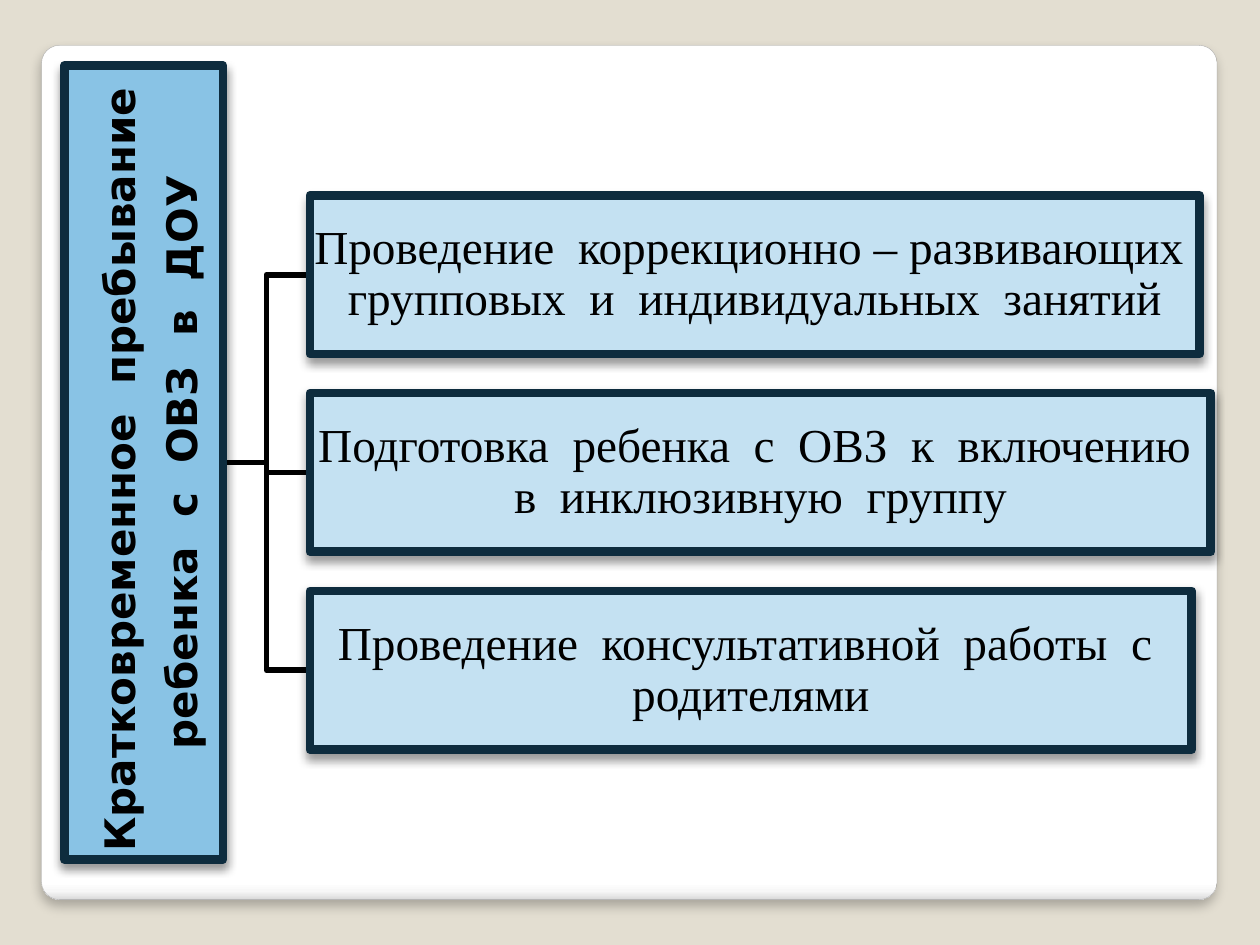
from lxml.etree import SubElement
from pptx import Presentation
from pptx.dml.color import RGBColor
from pptx.enum.shapes import MSO_SHAPE as Shape
from pptx.enum.text import MSO_ANCHOR as Anchor, MSO_AUTO_SIZE as AutoSize, PP_ALIGN as Align
from pptx.oxml.ns import qn
from pptx.util import Inches, Pt

COLUMNS, ROWS = 100, 75
BOX_HEIGHT = 12.6
BOX_LEFT, FIRST_CENTER, BOX_STEP = 24.6, 21.8, 15.7
TITLE_LENGTH, TITLE_X, TITLE_Y = 63, 11.4, 36.7

TITLE = "Кратковременное  пребывание  ребенка  с  ОВЗ  в  ДОУ"
BRANCHES = [
    ("Проведение  коррекционно – развивающих  групповых  и  индивидуальных  занятий", 70.6),
    ("Подготовка  ребенка  с  ОВЗ  к  включению  в  инклюзивную  группу", 71.5),
    ("Проведение  консультативной  работы  с  родителями", 70),
]


def color(value):
    return RGBColor.from_string(value)


def add_color(parent, value):
    return SubElement(parent, qn("a:srgbClr"), val=value)


class Diagram:
    """Holds the style and the page; lengths are grid columns and rows."""

    ink, border = "000000", "0E2C3E"
    title_fill, branch_fill = "89C3E5", "C4E1F2"
    panel_stops = [(0, "FFFFFF"), (98, "FFFFFF"), (99, "F7F7F7"), (100, "DADADA")]

    def __init__(self, deck):
        self.column = deck.slide_width / COLUMNS
        self.row = deck.slide_height / ROWS
        self.page = deck.slides.add_slide(deck.slide_layouts[5])
        background = self.page.background.fill
        background.solid()
        background.fore_color.rgb = color("E3DED1")

    def place(self, left, top, width, height):
        return (round(left * self.column), round(top * self.row),
                round(width * self.column), round(height * self.row))

    def outline(self, shape, value, width):
        shape.line.color.rgb = color(value)
        shape.line.width = Pt(width)
        SubElement(shape.line._get_or_add_ln(), qn("a:round"))

    def drop_shadow(self, shape, alpha, blur, distance):
        shape.shadow.inherit = False
        effects = shape.element.spPr.find(qn("a:effectLst"))
        shadow = SubElement(effects, qn("a:outerShdw"), blurRad=str(Pt(blur)),
                            dist=str(Pt(distance)), dir="5400000", rotWithShape="0")
        SubElement(add_color(shadow, self.ink), qn("a:alpha"), val=str(alpha * 1000))

    def panel(self, left, top, width, height):
        box = self.page.shapes.add_shape(
            Shape.ROUNDED_RECTANGLE, *self.place(left, top, width, height))
        box.adjustments[0] = 0.021
        box.fill.gradient()
        box.fill.gradient_angle = 270
        stops = box.element.spPr.find(qn("a:gradFill")).find(qn("a:gsLst"))
        stops.clear()
        for position, value in self.panel_stops:
            add_color(SubElement(stops, qn("a:gs"), pos=str(position * 1000)), value)
        self.outline(box, "A4A4A4", 0.16)
        self.drop_shadow(box, 25, 6, 4)

    def elbow(self, start, end):
        (x1, y1), (x2, y2) = start, end
        middle = (x1 + x2) / 2
        builder = self.page.shapes.build_freeform(
            round(x1 * self.column), round(y1 * self.row))
        builder.add_line_segments(
            [(round(x * self.column), round(y * self.row))
             for x, y in ((middle, y1), (middle, y2), (x2, y2))], close=False)
        line = builder.convert_to_shape()
        line.fill.background()
        line.shadow.inherit = False
        self.outline(line, self.ink, 3.35)

    def style_box(self, box, text, fill, font, size, spacing, bold=False):
        box.fill.solid()
        box.fill.fore_color.rgb = color(fill)
        self.outline(box, self.border, 5)
        self.drop_shadow(box, 40, 5.2, 3)
        frame = box.text_frame
        frame.text = text
        frame.word_wrap = True
        frame.auto_size = AutoSize.NONE
        frame.vertical_anchor = Anchor.MIDDLE
        frame.margin_left = frame.margin_right = Inches(0.02)
        frame.margin_top = frame.margin_bottom = Inches(0.02)
        para = frame.paragraphs[0]
        para.alignment = Align.CENTER
        para.line_spacing = spacing
        span = para.runs[0]
        span.font.name, span.font.size, span.font.bold = font, Pt(size), bold
        span.font.color.rgb = color(self.ink)

    def title(self, text):
        """Turn the title placeholder into the upright root box, above the panel."""
        box = self.page.shapes.title
        box.left, box.top, box.width, box.height = self.place(
            TITLE_X - TITLE_LENGTH / 2, TITLE_Y - BOX_HEIGHT / 2, TITLE_LENGTH, BOX_HEIGHT)
        box.rotation = 270
        self.style_box(box, text, self.title_fill, "DejaVu Sans", 24, 1.23, bold=True)
        box.element.getparent().append(box.element)

    def branch(self, text, center, width):
        box = self.page.shapes.add_shape(Shape.RECTANGLE, *self.place(
            BOX_LEFT, center - BOX_HEIGHT / 2, width, BOX_HEIGHT))
        self.style_box(box, text, self.branch_fill, "Times New Roman", 27, 0.9)


def main():
    deck = Presentation()
    deck.slide_width, deck.slide_height = Inches(10), Inches(7.5)
    diagram = Diagram(deck)
    diagram.panel(3.3, 3.6, 93.3, 67.8)
    centers = [FIRST_CENTER + BOX_STEP * index for index in range(len(BRANCHES))]
    for center in centers:
        diagram.elbow((TITLE_X + BOX_HEIGHT / 2, TITLE_Y), (BOX_LEFT, center))
    diagram.title(TITLE)
    for (text, width), center in zip(BRANCHES, centers):
        diagram.branch(text, center, width)
    deck.save("out.pptx")


if __name__ == "__main__":
    main()
